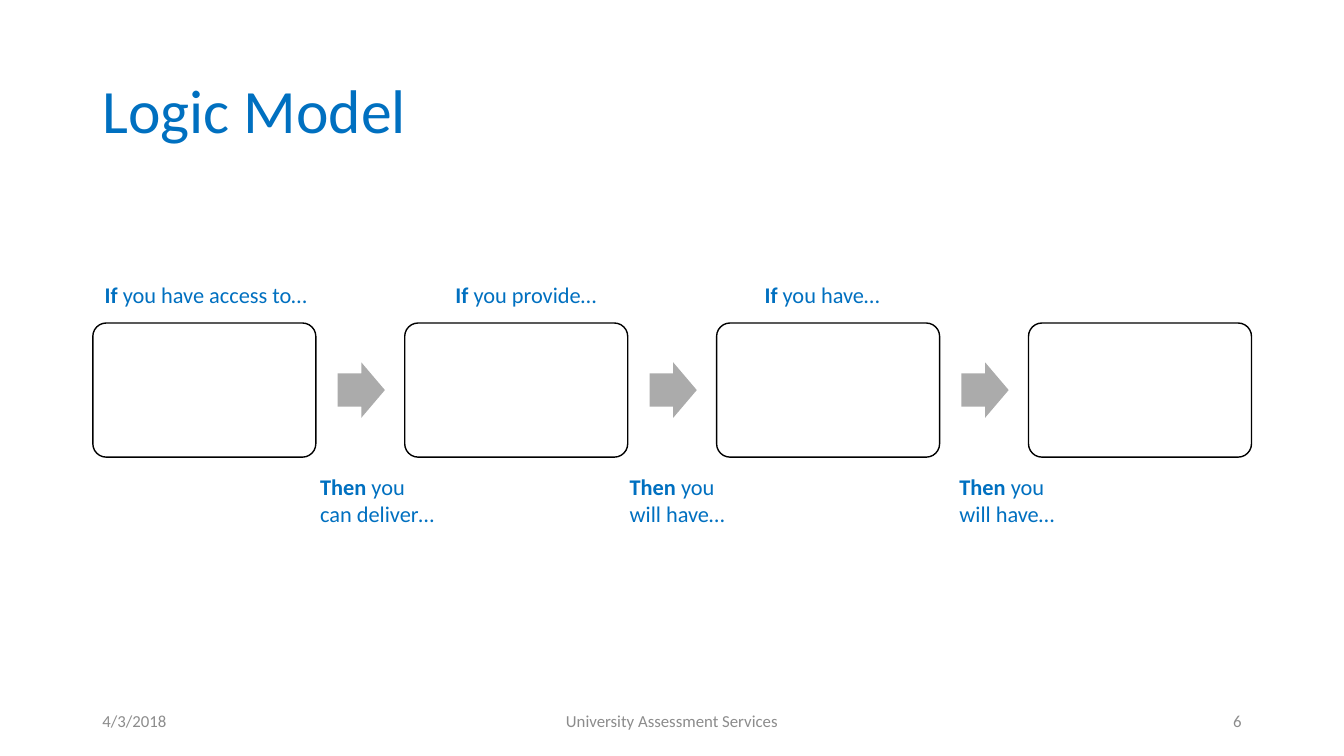
from dataclasses import dataclass

from pptx import Presentation
from pptx import util as u
from pptx.dml.color import RGBColor
from pptx.enum import shapes, text

BLUE = RGBColor(0x00, 0x70, 0xC0)
GREY = RGBColor(0x8C, 0x8C, 0x8C)
SILVER = RGBColor(0xAB, 0xAB, 0xAB)
BLACK = RGBColor(0x00, 0x00, 0x00)
WHITE = RGBColor(0xFF, 0xFF, 0xFF)

COUNT = 4
STEP = 7.86


@dataclass(frozen=True)
class Box:
    left: float
    top: float
    width: float
    height: float

    def shift(self, gap: float) -> "Box":
        return Box(self.left + gap, self.top, self.width, self.height)

    def place(self) -> tuple:
        return u.Cm(self.left), u.Cm(self.top), u.Cm(self.width), u.Cm(self.height)


@dataclass(frozen=True)
class Label:
    box: Box
    lead: str
    rest: str


@dataclass(frozen=True)
class Footer:
    box: Box
    words: str
    align: text.PP_ALIGN


CARD = Box(2.34, 8.14, 5.62, 3.38)
ARROW = Box(8.51, 9.13, 1.19, 1.4)

LABELS = [
    Label(Box(2.39, 6.96, 5.84, 0.94), "If", " you have access to…"),
    Label(Box(7.82, 11.81, 5.1, 1.63), "Then", " you\ncan deliver…"),
    Label(Box(11.23, 6.96, 4.39, 0.94), "If", " you provide…"),
    Label(Box(15.62, 11.81, 5.1, 1.63), "Then", " you\nwill have…"),
    Label(Box(19.02, 6.96, 4.39, 0.94), "If", " you have…"),
    Label(Box(23.93, 11.81, 5.1, 1.63), "Then", " you\nwill have…"),
]

FOOTERS = [
    Footer(Box(2.33, 17.66, 7.62, 1.01), "4/3/2018", text.PP_ALIGN.LEFT),
    Footer(Box(11.22, 17.66, 11.43, 1.01), "University Assessment Services",
           text.PP_ALIGN.CENTER),
    Footer(Box(23.92, 17.66, 7.62, 1.01), "6", text.PP_ALIGN.RIGHT),
]


def write(slide, box: Box, words: str, *, lead: str = "", size: int = 16,
          color: RGBColor = BLUE, align=text.PP_ALIGN.LEFT,
          anchor=text.MSO_ANCHOR.TOP, space: float = 1.0) -> None:
    frame = slide.shapes.add_textbox(*box.place()).text_frame
    frame.word_wrap = True
    frame.vertical_anchor = anchor
    for row, line in enumerate(words.split("\n")):
        para = frame.add_paragraph() if row else frame.paragraphs[0]
        para.alignment = align
        para.line_spacing = space
        parts = [(line, False)]
        if lead and row == 0:
            parts.insert(0, (lead, True))
        for part, bold in parts:
            run = para.add_run()
            run.text = part
            run.font.name = "Calibri"
            run.font.size = u.Pt(size)
            run.font.bold = bold
            run.font.color.rgb = color


def draw(slide, kind: shapes.MSO_SHAPE, box: Box, fill: RGBColor,
         adjust: list[float], line: RGBColor | None = None) -> None:
    shape = slide.shapes.add_shape(kind, *box.place())
    shape.shadow.inherit = False
    for spot, value in enumerate(adjust):
        shape.adjustments[spot] = value
    shape.fill.solid()
    shape.fill.fore_color.rgb = fill
    if line is None:
        shape.line.fill.background()
    else:
        shape.line.color.rgb = line
        shape.line.width = u.Pt(1)


def main() -> None:
    deck = Presentation()
    deck.slide_width = u.Cm(33.87)
    deck.slide_height = u.Cm(19.05)
    slide = deck.slides.add_slide(deck.slide_layouts[6])

    write(slide, Box(2.33, 1.01, 29.21, 3.68), "Logic Model", size=44,
          anchor=text.MSO_ANCHOR.MIDDLE, space=0.9)

    for spot in range(COUNT):
        gap = spot * STEP
        draw(slide, shapes.MSO_SHAPE.ROUNDED_RECTANGLE, CARD.shift(gap),
             WHITE, [0.1], BLACK)
        if spot < COUNT - 1:
            draw(slide, shapes.MSO_SHAPE.RIGHT_ARROW, ARROW.shift(gap),
                 SILVER, [0.6, 0.5])

    for foot in FOOTERS:
        write(slide, foot.box, foot.words, size=12, color=GREY,
              align=foot.align, anchor=text.MSO_ANCHOR.MIDDLE)

    for label in LABELS:
        write(slide, label.box, label.rest, lead=label.lead)

    deck.save("out.pptx")


if __name__ == "__main__":
    main()
